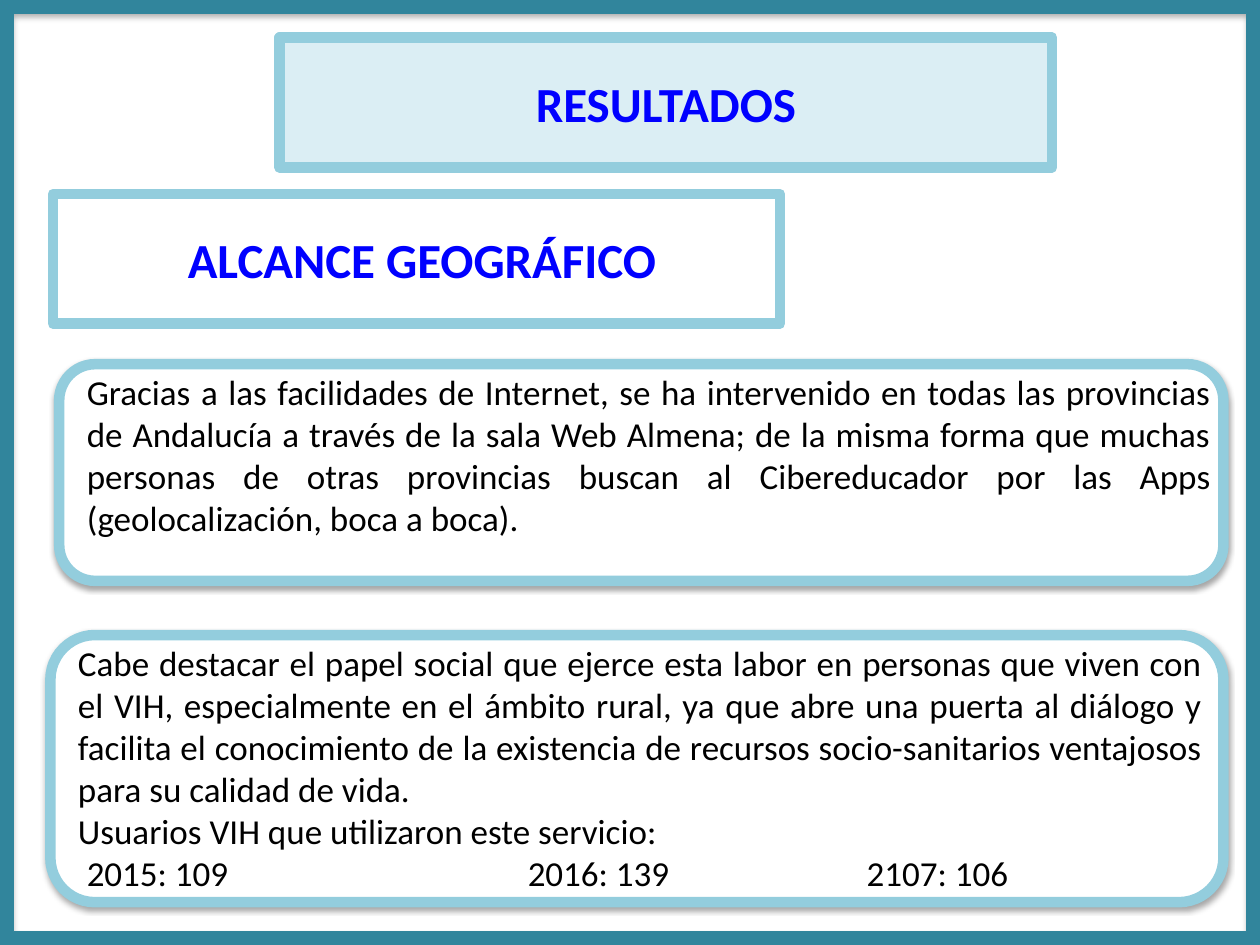
from dataclasses import dataclass

import pptx
import pptx.dml.color
import pptx.enum.shapes
import pptx.enum.text
import pptx.oxml
import pptx.oxml.ns
import pptx.util

Inches = pptx.util.Inches
Pt = pptx.util.Pt
MSO_SHAPE = pptx.enum.shapes.MSO_SHAPE
PP_ALIGN = pptx.enum.text.PP_ALIGN
MSO_ANCHOR = pptx.enum.text.MSO_ANCHOR


@dataclass(frozen=True)
class Theme:
    """Colours, font and sizes of the slide."""
    frame: str = "31859C"
    border: str = "93CDDD"
    tint: str = "DBEEF4"
    white: str = "FFFFFF"
    heading: str = "0000FF"
    body: str = "000000"
    font: str = "Calibri"
    heading_size: int = 28
    body_size: int = 20
    border_width: int = 6


THEME = Theme()


def rgb(value):
    """Return an RGB colour from a hex string."""
    return pptx.dml.color.RGBColor.from_string(value)


def add_shadow(sp):
    """Give a shape a soft shadow that falls downwards."""
    sp.shadow.inherit = False
    effects = sp._element.spPr.find(pptx.oxml.ns.qn("a:effectLst"))
    effects.append(pptx.oxml.parse_xml(
        f'<a:outerShdw {pptx.oxml.ns.nsdecls("a")} blurRad="{Pt(3.1)}" '
        f'dist="{Pt(1.8)}" dir="5400000" rotWithShape="0">'
        '<a:srgbClr val="000000"><a:alpha val="35000"/></a:srgbClr>'
        '</a:outerShdw>'))


def add_box(s, kind, box, fill=None, line=THEME.border,
            width=THEME.border_width, shadow=False):
    """Add a preset shape with its fill, outline and optional shadow."""
    sp = s.shapes.add_shape(kind, *map(Inches, box))
    if fill:
        sp.fill.solid()
        sp.fill.fore_color.rgb = rgb(fill)
    else:
        sp.fill.background()
    sp.line.color.rgb = rgb(line)
    sp.line.width = Pt(width)
    if shadow:
        add_shadow(sp)
    else:
        sp.shadow.inherit = False
    return sp


def add_text(tf, text, size=THEME.body_size, color=THEME.body, bold=False,
             align=PP_ALIGN.JUSTIFY, tabs=()):
    """Write one formatted paragraph into a text frame."""
    p = tf.paragraphs[0] if not tf.text else tf.add_paragraph()
    p.alignment = align
    if tabs:
        stops = "".join(f'<a:tab pos="{Inches(t)}" algn="l"/>' for t in tabs)
        p._p.get_or_add_pPr().append(pptx.oxml.parse_xml(
            f'<a:tabLst {pptx.oxml.ns.nsdecls("a")}>{stops}</a:tabLst>'))
    r = p.add_run()
    r.text = text
    r.font.name = THEME.font
    r.font.size = Pt(size)
    r.font.bold = bold
    r.font.color.rgb = rgb(color)


def add_frame(s, box):
    """Add the border that runs round the slide."""
    sp = add_box(s, MSO_SHAPE.FRAME, box, fill=THEME.frame, line=THEME.frame,
                 width=0.75, shadow=True)
    sp.adjustments[0] = 0.014


def add_heading(s, box, text, fill=None):
    """Add a bordered heading with centred text."""
    tf = add_box(s, MSO_SHAPE.RECTANGLE, box, fill=fill).text_frame
    tf.word_wrap = True
    tf.vertical_anchor = MSO_ANCHOR.MIDDLE
    add_text(tf, text, size=THEME.heading_size, color=THEME.heading,
             bold=True, align=PP_ALIGN.CENTER)


def add_panel(s, box, paragraphs, figures=()):
    """Add a rounded panel with paragraphs and a tabbed row of figures."""
    left, top, width, height = box
    text_width = 9.12
    add_box(s, MSO_SHAPE.ROUNDED_RECTANGLE, box, fill=THEME.white, shadow=True)
    tb = s.shapes.add_textbox(Inches(left + 0.12), Inches(top),
                              Inches(text_width), Inches(height))
    tf = tb.text_frame
    tf.word_wrap = True
    for text in paragraphs:
        add_text(tf, text)
    if figures:
        add_text(tf, "".join(f"\t{text}" for text, _ in figures),
                 align=PP_ALIGN.LEFT, tabs=[pos for _, pos in figures])


def main():
    """Build the results slide and save it."""
    prs = pptx.Presentation()
    prs.slide_width, prs.slide_height = Inches(10), Inches(7.5)
    s = prs.slides.add_slide(prs.slide_layouts[6])
    s.background.fill.solid()
    s.background.fill.fore_color.rgb = rgb(THEME.white)

    add_frame(s, (0, 0, 10, 7.5))
    add_heading(s, (0.42, 1.54, 5.77, 1.03), " ALCANCE GEOGRÁFICO")
    add_heading(s, (2.22, 0.3, 6.13, 1.03), "RESULTADOS", fill=THEME.tint)
    add_panel(s, (0.47, 2.89, 9.24, 1.72), [
        "Gracias a las facilidades de Internet, se ha intervenido en todas las "
        "provincias de Andalucía a través de la sala Web Almena; de la misma "
        "forma que muchas personas de otras provincias buscan al Cibereducador "
        "por las Apps (geolocalización, boca a boca).",
    ])
    add_panel(s, (0.4, 5.04, 9.31, 2.12), [
        "Cabe destacar el papel social que ejerce esta labor en personas que "
        "viven con el VIH, especialmente en el ámbito rural, ya que abre una "
        "puerta al diálogo y facilita el conocimiento de la existencia de "
        "recursos socio-sanitarios ventajosos para su calidad de vida.",
        "Usuarios VIH que utilizaron este servicio:",
    ], figures=[("2015: 109", 0.07), ("2016: 139", 3.57), ("2107: 106", 6.26)])

    prs.save("out.pptx")


if __name__ == "__main__":
    main()
